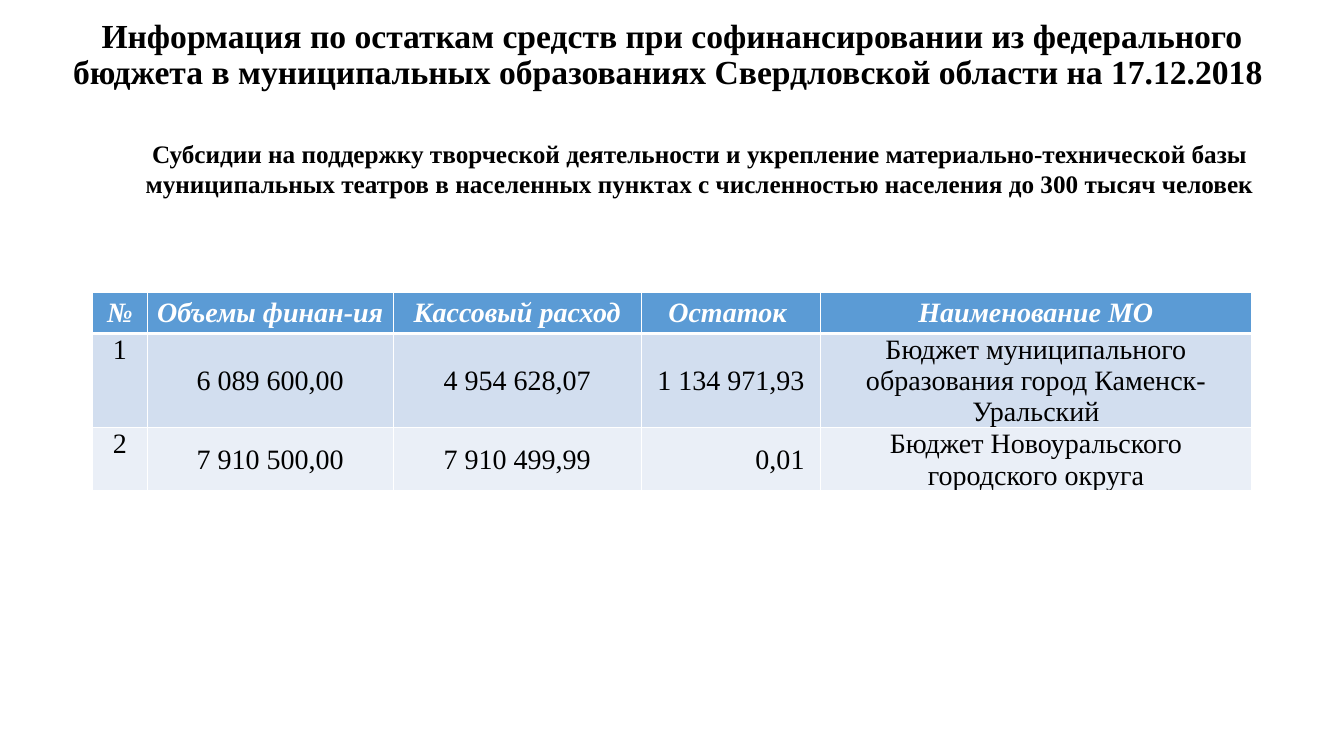
import pptx
import pptx.util
import pptx.dml.color
import pptx.enum.text
import pptx.oxml
import pptx.oxml.ns

Inches = pptx.util.Inches
Pt = pptx.util.Pt
ALIGN = pptx.enum.text.PP_ALIGN
ANCHOR = pptx.enum.text.MSO_ANCHOR
FONT = "Times New Roman"

TITLE = ("Информация по остаткам средств при софинансировании из федерального "
         "бюджета в муниципальных образованиях Свердловской области на 17.12.2018 ")
TOPIC = ("Субсидии на поддержку творческой деятельности и укрепление "
         "материально-технической базы муниципальных театров в населенных "
         "пунктах с численностью населения до 300 тысяч человек")
ROWS = [
    ["№", "Объемы финан-ия", "Кассовый расход", "Остаток ", "Наименование МО"],
    ["1", "6 089 600,00", "4 954 628,07", "1 134 971,93",
     "Бюджет муниципального образования город Каменск-Уральский"],
    ["2", "7 910 500,00", "7 910 499,99", "0,01",
     "Бюджет Новоуральского городского округа"],
]
WIDTHS = [0.54, 2.44, 2.46, 1.78, 4.27]
FILLS = ["5B9BD5", "D2DEEF", "EAEFF7"]


def color(code):
    return pptx.dml.color.RGBColor.from_string(code)


def write(frame, text, size, code, bold=True, slant=False):
    frame.text = text
    line = frame.paragraphs[0]
    line.alignment = ALIGN.CENTER
    font = line.font
    font.name = FONT
    font.size = Pt(size)
    font.bold = bold
    font.italic = slant
    font.color.rgb = color(code)
    return line


def place(shape, left, top, width, height):
    shape.left, shape.top = Inches(left), Inches(top)
    shape.width, shape.height = Inches(width), Inches(height)


def add_title(slide):
    title = slide.shapes.title
    place(title, 0.38, 0.22, 12.57, 0.66)
    frame = title.text_frame
    frame.auto_size = pptx.enum.text.MSO_AUTO_SIZE.NONE
    frame.vertical_anchor = ANCHOR.MIDDLE
    write(frame, TITLE, 24, "000000").line_spacing = 0.9


def add_topic(slide):
    box = slide.shapes.add_textbox(
        Inches(0.92), Inches(1.32), Inches(12.04), Inches(0.71))
    box.text_frame.word_wrap = True
    write(box.text_frame, TOPIC, 18, "000000")


def set_edge(cell, side, width):
    edge = pptx.oxml.parse_xml(
        f'<a:ln{side} {pptx.oxml.ns.nsdecls("a")} w="{Pt(width)}">'
        '<a:solidFill><a:srgbClr val="FFFFFF"/></a:solidFill>'
        f'</a:ln{side}>')
    cell._tc.get_or_add_tcPr().append(edge)


def fill_cell(cell, text, row, col):
    head = row == 0
    for side in "LRTB":
        thick = (head and side == "B") or (row == 1 and side == "T")
        set_edge(cell, side, 3 if thick else 1)
    cell.fill.solid()
    cell.fill.fore_color.rgb = color(FILLS[row])
    cell.margin_left = cell.margin_right = cell.margin_top = Inches(0.01)
    cell.margin_bottom = 0
    cell.vertical_anchor = ANCHOR.MIDDLE if head or col else ANCHOR.TOP
    line = write(cell.text_frame, text, 20,
                 "FFFFFF" if head else "000000", head, head)
    if text == "0,01":
        line.alignment = ALIGN.RIGHT
        cell.margin_right = Inches(0.16)


def add_grid(slide):
    grid = slide.shapes.add_table(
        len(ROWS), len(WIDTHS), Inches(0.92), Inches(2.9),
        Inches(sum(WIDTHS)), Inches(0.41 * len(ROWS))).table
    for col, width in zip(grid.columns, WIDTHS):
        col.width = Inches(width)
    for row, texts in enumerate(ROWS):
        for col, text in enumerate(texts):
            fill_cell(grid.cell(row, col), text, row, col)


def main():
    deck = pptx.Presentation()
    deck.slide_width, deck.slide_height = Inches(13.33), Inches(7.5)
    slide = deck.slides.add_slide(deck.slide_layouts[5])
    add_title(slide)
    add_grid(slide)
    add_topic(slide)
    deck.save("out.pptx")


if __name__ == "__main__":
    main()
